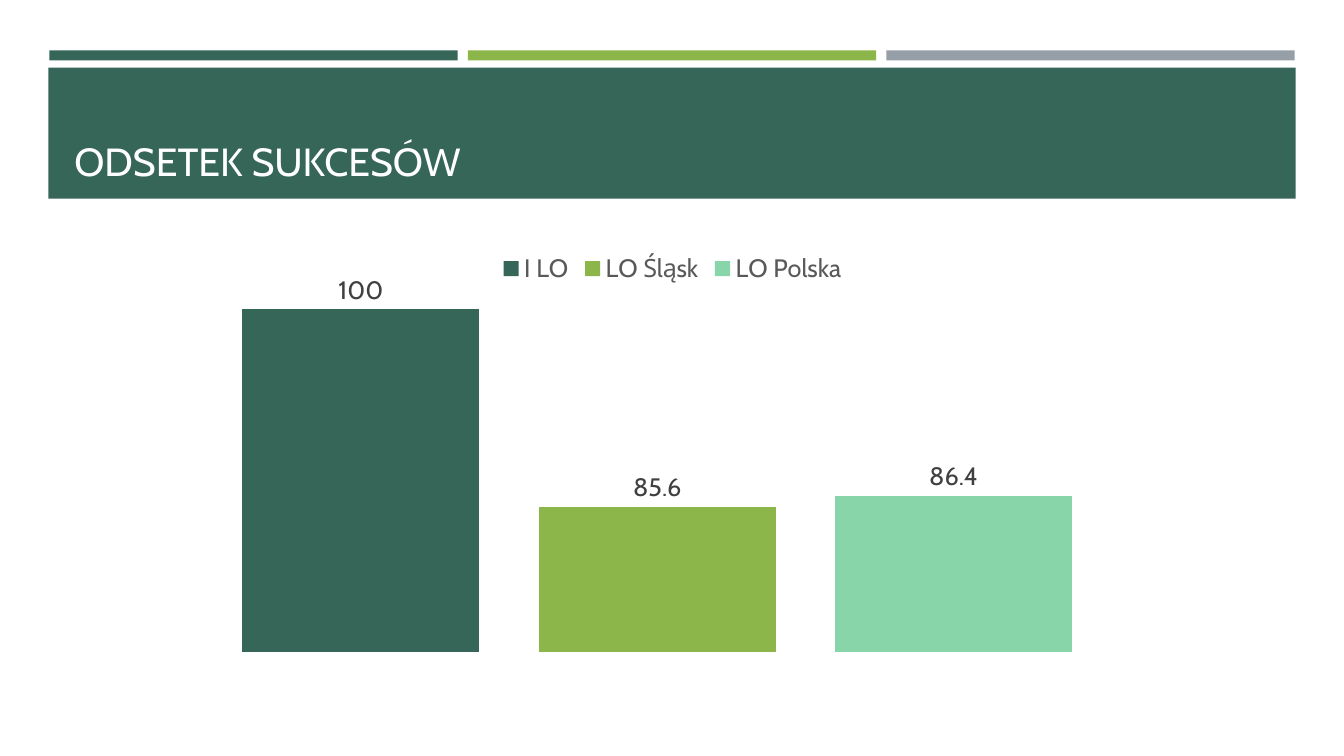
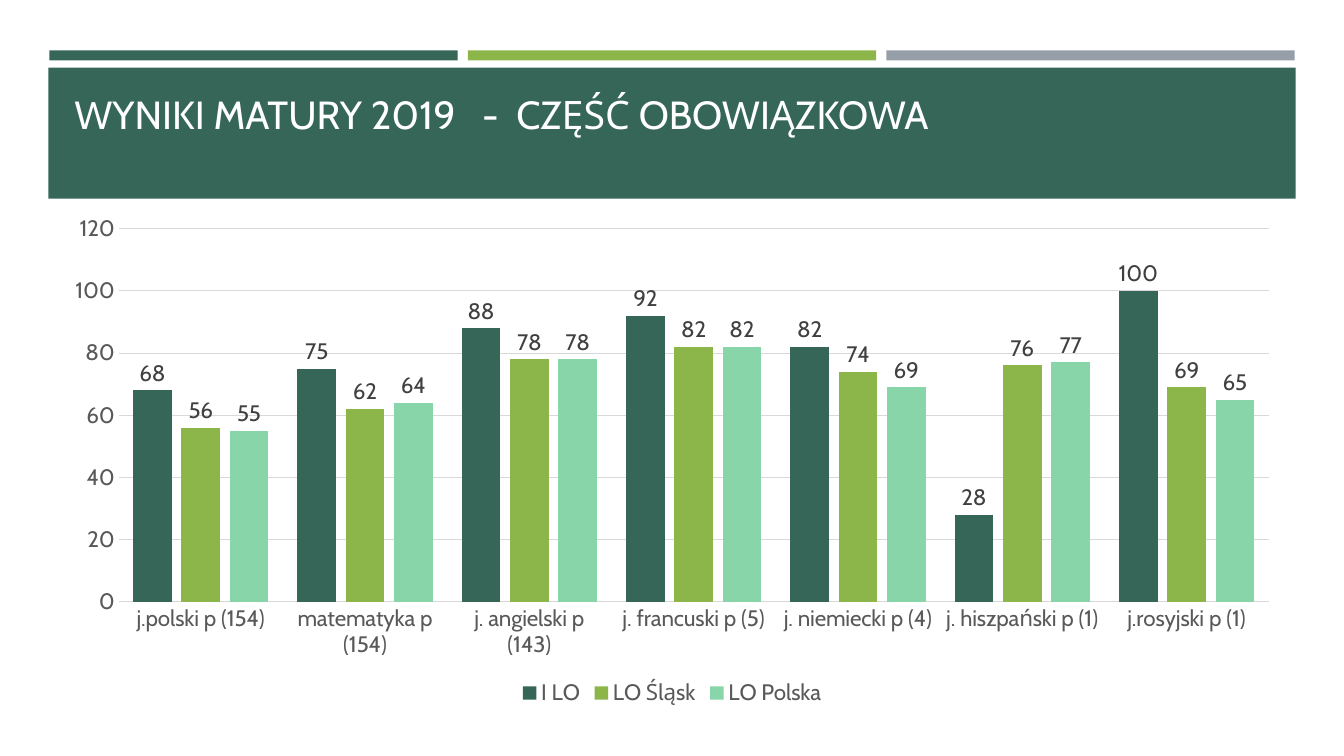
"""Two slides of exam results: success rate and compulsory part, each with a column chart."""
from dataclasses import dataclass

from lxml import etree
from pptx import Presentation
from pptx.chart.data import CategoryChartData
from pptx.dml.color import RGBColor
from pptx.enum.chart import XL_CHART_TYPE, XL_LABEL_POSITION, XL_LEGEND_POSITION, XL_TICK_MARK
from pptx.enum.shapes import MSO_SHAPE
from pptx.enum.text import MSO_ANCHOR
from pptx.oxml import parse_xml
from pptx.oxml.ns import qn
from pptx.util import Inches, Pt

COLUMNS = XL_CHART_TYPE.COLUMN_CLUSTERED
OUTSIDE_END = XL_LABEL_POSITION.OUTSIDE_END
LEGEND_TOP, LEGEND_BOTTOM = XL_LEGEND_POSITION.TOP, XL_LEGEND_POSITION.BOTTOM
NO_TICK = XL_TICK_MARK.NONE
RECTANGLE = MSO_SHAPE.RECTANGLE
BOTTOM = MSO_ANCHOR.BOTTOM


@dataclass(frozen=True)
class Theme:
    font: str = "Cabin"
    title_size: int = 28
    green: RGBColor = RGBColor(0x36, 0x66, 0x58)
    lime: RGBColor = RGBColor(0x8C, 0xB6, 0x4A)
    mint: RGBColor = RGBColor(0x88, 0xD5, 0xA9)
    grey: RGBColor = RGBColor(0x96, 0x9F, 0xA7)
    white: RGBColor = RGBColor(0xFF, 0xFF, 0xFF)
    label: RGBColor = RGBColor(0x40, 0x40, 0x40)
    axis: RGBColor = RGBColor(0x59, 0x59, 0x59)
    rule: RGBColor = RGBColor(0xD9, 0xD9, 0xD9)


THEME = Theme()
SCHOOLS = {"I LO": THEME.green, "LO Śląsk": THEME.lime, "LO Polska": THEME.mint}
BANDS = [
    (0.49, 0.5, 4.05, 0.1, THEME.green),
    (4.64, 0.5, 4.05, 0.1, THEME.lime),
    (8.79, 0.5, 4.05, 0.1, THEME.grey),
    (0.48, 0.67, 12.37, 1.3, THEME.green),
]


def add_titled_slide(deck, title, space_below):
    slide = deck.slides.add_slide(deck.slide_layouts[6])
    for left, top, width, height, color in BANDS:
        band = slide.shapes.add_shape(RECTANGLE, Inches(left), Inches(top), Inches(width), Inches(height))
        band.shadow.inherit = False
        band.fill.solid()
        band.fill.fore_color.rgb = color
        band.line.fill.background()
    heading = slide.shapes.add_textbox(Inches(0.64), Inches(0.77), Inches(12.06), Inches(1.11)).text_frame
    heading.word_wrap = True
    heading.vertical_anchor = BOTTOM
    heading.margin_bottom = Inches(space_below)
    run = heading.paragraphs[0].add_run()
    run.text = title
    run.font.name = THEME.font
    run.font.size = Pt(THEME.title_size)
    run.font.color.rgb = THEME.white
    return slide


def add_results_chart(slide, box, subjects, results, size, gap, legend_position):
    data = CategoryChartData()
    data.categories = subjects
    for school, scores in zip(SCHOOLS, results):
        data.add_series(school, scores)
    chart = slide.shapes.add_chart(COLUMNS, *map(Inches, box), data).chart
    chart.has_title = False
    chart.font.name = THEME.font
    chart.font.size = Pt(size)
    chart.font.color.rgb = THEME.axis
    chart.has_legend = True
    chart.legend.position = legend_position
    chart.legend.include_in_layout = False
    chart.legend.font.name = THEME.font
    chart.legend.font.size = Pt(size)
    chart.legend.font.color.rgb = THEME.axis
    plot = chart.plots[0]
    plot.gap_width = gap
    plot.overlap = -25
    plot.vary_by_categories = False
    for series, color in zip(plot.series, SCHOOLS.values()):
        series.format.fill.solid()
        series.format.fill.fore_color.rgb = color
        labels = series.data_labels
        labels.show_value = True
        labels.position = OUTSIDE_END
        labels.font.name = THEME.font
        labels.font.size = Pt(size)
        labels.font.color.rgb = THEME.label
    return chart


deck = Presentation()
deck.slide_width, deck.slide_height = Inches(13.33), Inches(7.5)

success_slide = add_titled_slide(deck, "ODSETEK SUKCESÓW", 0.05)
success = add_results_chart(
    success_slide, (0.64, 2.39, 12.06, 4.83), ["1"], [[100], [85.6], [86.4]], 18, 150, LEGEND_TOP
)
success.value_axis.minimum_scale = 75
success.value_axis.maximum_scale = 105
success.value_axis.has_major_gridlines = False
success.value_axis.visible = False
success.category_axis.visible = False

plot_area = success.plots[0]._element.getparent()
for automatic_layout in plot_area.findall(qn("c:layout")):
    plot_area.remove(automatic_layout)
layout = parse_xml('<c:layout xmlns:c="http://schemas.openxmlformats.org/drawingml/2006/chart"/>')
manual = etree.SubElement(layout, qn("c:manualLayout"))
for tag, value in [
    ("layoutTarget", "inner"), ("xMode", "edge"), ("yMode", "edge"),
    ("x", "0"), ("y", "0"), ("w", "0.975"), ("h", "0.845"),
]:
    etree.SubElement(manual, qn(f"c:{tag}")).set("val", value)
plot_area.insert(0, layout)

exam_slide = add_titled_slide(deck, "WYNIKI MATURY 2019   -  CZĘŚĆ OBOWIĄZKOWA", 0.52)
exam = add_results_chart(
    exam_slide,
    (0.5, 2.04, 12.33, 5.01),
    [
        "j.polski p (154)", "matematyka p (154)", "j. angielski p (143)", "j. francuski p (5)",
        "j. niemiecki p (4)", "j. hiszpański p (1)", "j.rosyjski p (1)",
    ],
    [
        [68, 75, 88, 92, 82, 28, 100],
        [56, 62, 78, 82, 74, 76, 69],
        [55, 64, 78, 82, 69, 77, 65],
    ],
    16, 75, LEGEND_BOTTOM,
)
exam.value_axis.minimum_scale = 0
exam.value_axis.maximum_scale = 120
exam.value_axis.major_unit = 20
for axis in (exam.category_axis, exam.value_axis):
    axis.major_tick_mark = NO_TICK
    axis.minor_tick_mark = NO_TICK
    axis.tick_labels.font.name = THEME.font
    axis.tick_labels.font.size = Pt(16)
    axis.tick_labels.font.color.rgb = THEME.axis
for line in (exam.category_axis.format.line, exam.value_axis.major_gridlines.format.line):
    line.color.rgb = THEME.rule
    line.width = Pt(0.75)
exam.value_axis.format.line.fill.background()

deck.save("out.pptx")
